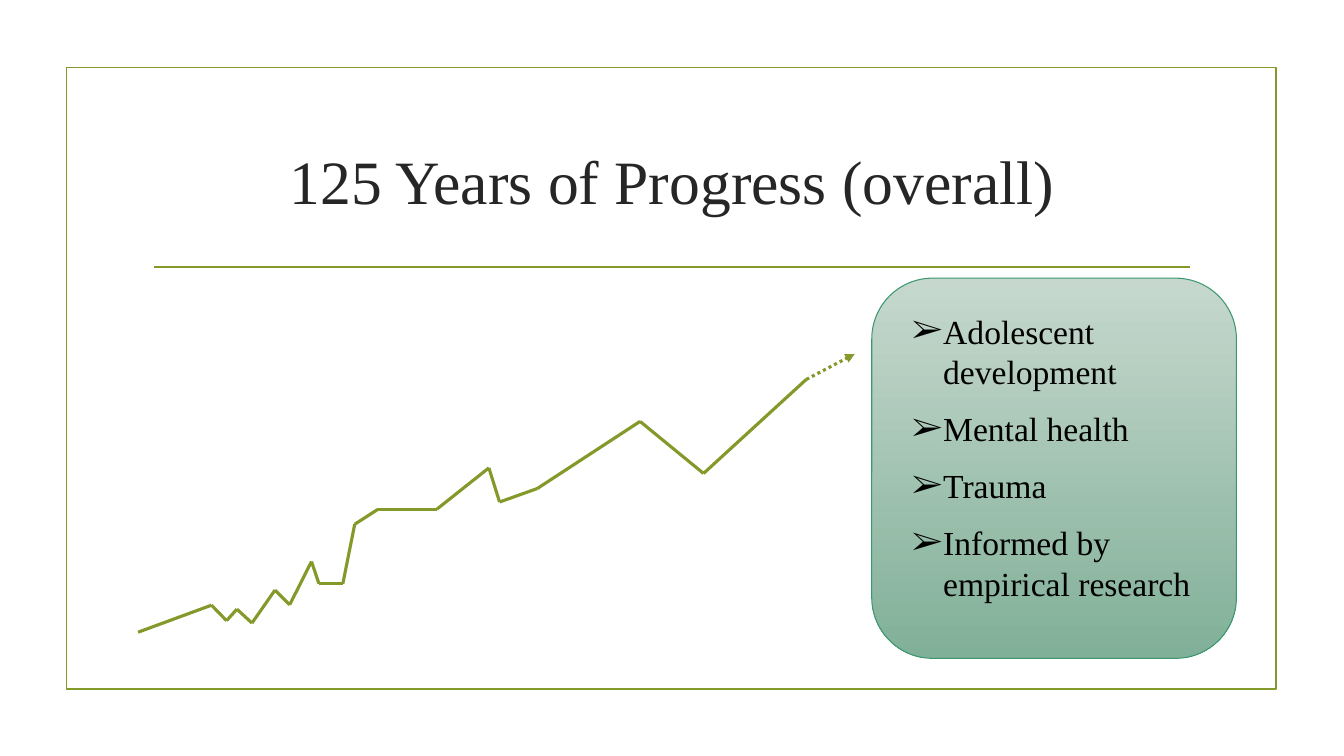
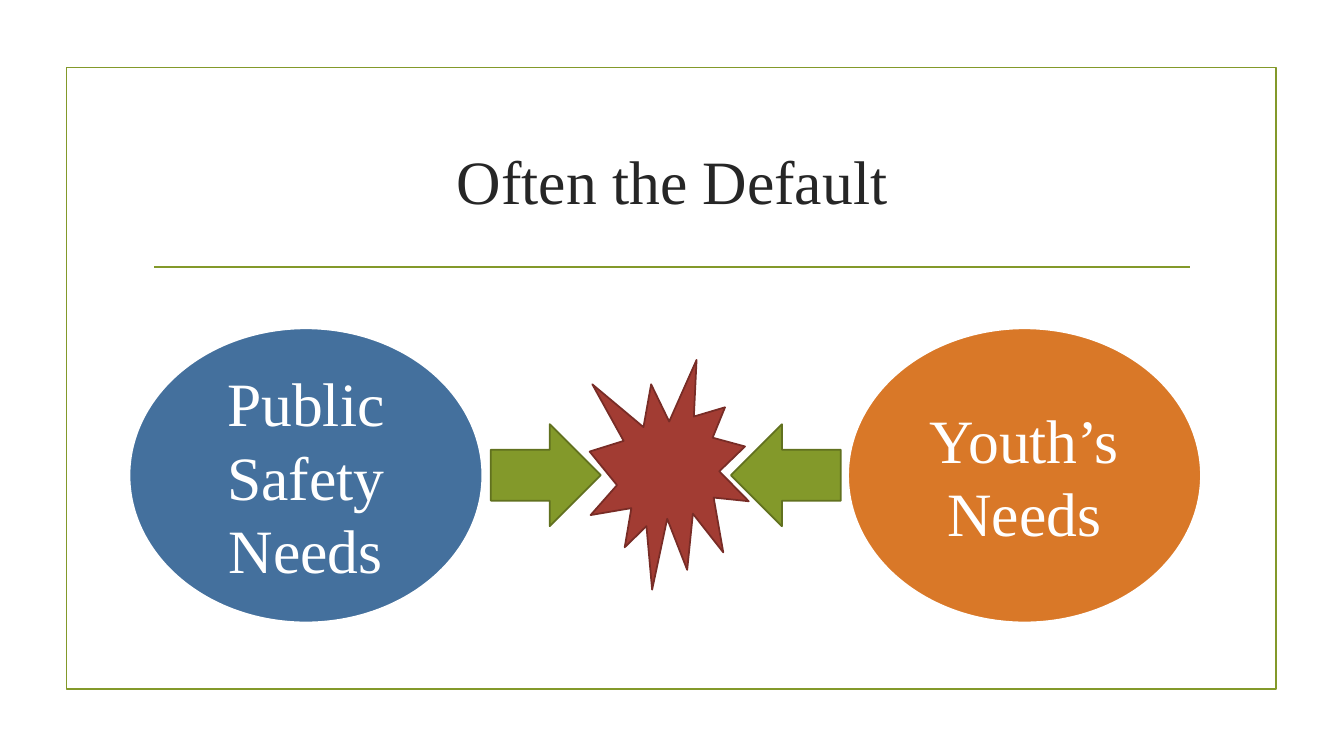
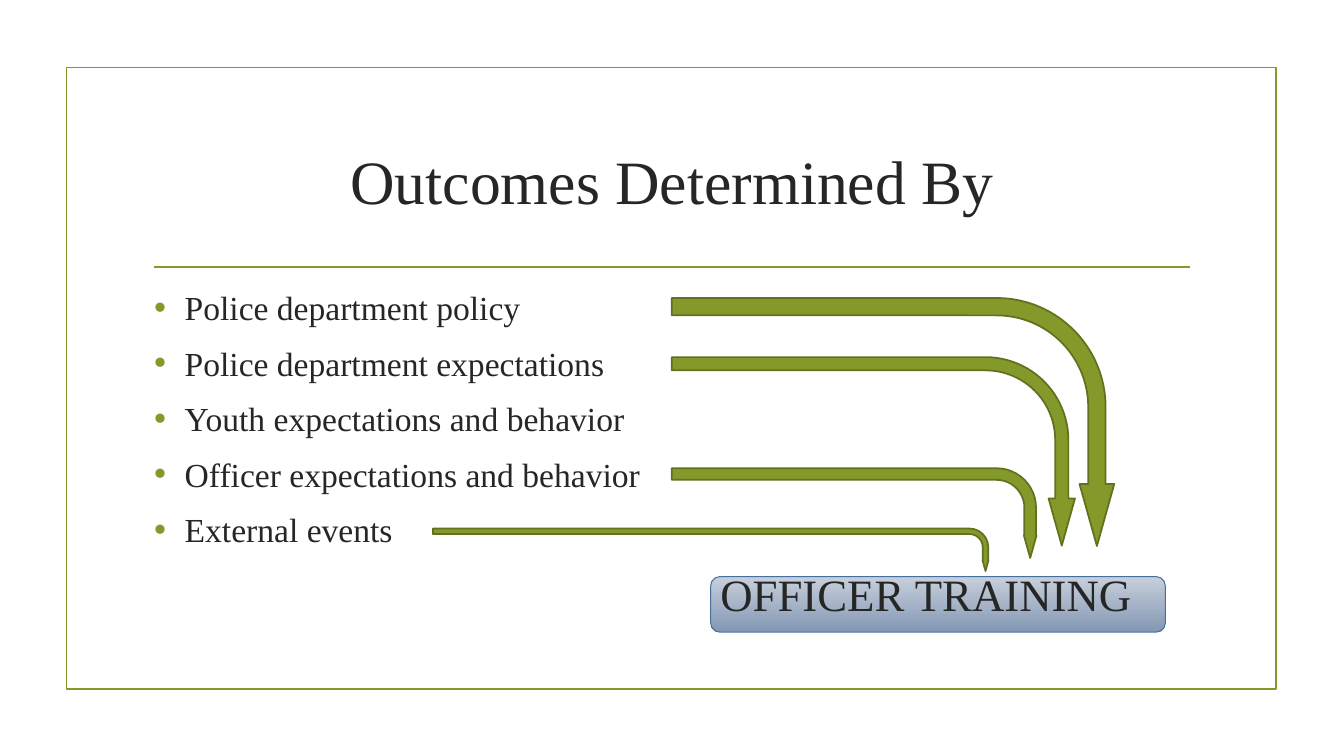
"""Build three slides on progress, clashing needs and outcomes in police work."""
from dataclasses import dataclass
from itertools import pairwise

from lxml import etree
from pptx import Presentation
from pptx.dml.color import RGBColor
from pptx.enum.dml import MSO_LINE
from pptx.enum.shapes import MSO_CONNECTOR, MSO_SHAPE
from pptx.enum.text import MSO_ANCHOR, MSO_AUTO_SIZE, PP_ALIGN
from pptx.oxml.ns import qn
from pptx.util import Cm, Pt

RECT, ROUND = MSO_SHAPE.RECTANGLE, MSO_SHAPE.ROUNDED_RECTANGLE
OVAL, BURST = MSO_SHAPE.OVAL, MSO_SHAPE.EXPLOSION1
ARROW, BENT = MSO_SHAPE.RIGHT_ARROW, MSO_SHAPE.BENT_ARROW
STRAIGHT, DOTS = MSO_CONNECTOR.STRAIGHT, MSO_LINE.ROUND_DOT
MIDDLE, TOP = MSO_ANCHOR.MIDDLE, MSO_ANCHOR.TOP
LEFT, CENTER, RIGHT = PP_ALIGN.LEFT, PP_ALIGN.CENTER, PP_ALIGN.RIGHT
FIXED = MSO_AUTO_SIZE.NONE


@dataclass(frozen=True)
class Theme:
    """Colours, font and type sizes."""
    font: str = "Times New Roman"
    ink: str = "262626"
    black: str = "000000"
    white: str = "FFFFFF"
    green: str = "83992A"
    moss: str = "61711F"
    blue: str = "44709D"
    orange: str = "D97828"
    red: str = "A23C33"
    wine: str = "782C26"
    teal: str = "3C9770"
    mint: tuple = ("C6D8CE", "81B098")
    steel: tuple = ("C7CFDB", "8498B4")
    big: int = 44
    mid: int = 32
    small: int = 24
    thin: float = 0.75
    edge: float = 1.25
    rim: float = 2
    trend: float = 2.25


T = Theme()
FRAME = (1.68, 1.7, 30.48, 15.67)
RULE = ((3.89, 6.73), (30, 6.73))
HEAD = (3.61, 2.72, 26.67, 3.63)
INDENT = 0.79

TITLES = ["125 Years of Progress (overall)", "Often the Default", "Outcomes Determined By"]

TREND = [
    (3.48, 15.93), (5.33, 15.25), (5.71, 15.64), (5.97, 15.35), (6.35, 15.7),
    (6.93, 14.87), (7.3, 15.24), (7.85, 14.15), (8.04, 14.71), (8.64, 14.71),
    (8.94, 13.21), (9.53, 12.83), (11.01, 12.83), (12.32, 11.79), (12.59, 12.65),
    (13.54, 12.31), (16.13, 10.62), (17.73, 11.93), (20.32, 9.56),
]
AHEAD = (21.54, 8.92)
CARD = (21.97, 7.01, 9.19, 9.58)
NOTES = (22.73, 7.7, 8.18, 7.7)
GAINS = ["Adolescent development", "Mental health", "Trauma", "Informed by empirical research"]

NEEDS = [
    (3.25, T.blue, ["Public Safety Needs"], 12.37, 0),
    (21.36, T.orange, ["Youth’s", "Needs"], 18.42, 180),
]
CLASH = (14.86, 9.07, 4.01, 5.79)

BODY = (3.61, 7.11, 25.45, 9.22)
GOAL = (17.91, 14.53, 11.46, 1.4)
CAUSES = [
    "Police department policy",
    "Police department expectations",
    "Youth expectations and behavior",
    "Officer expectations and behavior",
    "External events",
]
RESULT = "OFFICER TRAINING "
BENDS = [
    (16.93, 7.51, 11.15, 6.25, 0.07),
    (16.93, 9, 10.16, 4.75, 0.07),
    (16.93, 11.8, 9.19, 2.26, 0.13),
    (10.91, 13.32, 14, 1.07, 0.13),
]


def rgb(code):
    """Turn a hex code into a colour."""
    return RGBColor.from_string(code)


def apply(obj, **looks):
    """Set each named format value on an object."""
    for name, value in looks.items():
        setattr(obj, name, value)


def place(shape, box):
    """Move a shape to a box given in centimetres."""
    apply(shape, **dict(zip(("left", "top", "width", "height"), map(Cm, box))))


def node(parent, tag, **attrs):
    """Append a drawing element."""
    return etree.SubElement(parent, qn(f"a:{tag}"), **attrs)


def draw(slide, kind, box, fill, edge, width=T.edge, turn=0, adjust=()):
    """Add a preset shape with plain, gradient or no fill."""
    shape = slide.shapes.add_shape(kind, *map(Cm, box))
    shape.shadow.inherit = False
    if fill is None:
        shape.fill.background()
    elif isinstance(fill, tuple):
        shape.fill.gradient()
        shape.fill.gradient_angle = 270
        for stop, code in zip(shape.fill.gradient_stops, fill):
            stop.color.rgb = rgb(code)
    else:
        shape.fill.solid()
        shape.fill.fore_color.rgb = rgb(fill)
    shape.line.color.rgb = rgb(edge)
    shape.line.width = Pt(width)
    shape.rotation = turn
    for i, value in enumerate(adjust):
        shape.adjustments[i] = value
    return shape


def link(slide, start, end, width, dotted=False):
    """Add a straight line, dotted with an arrowhead if asked."""
    line = slide.shapes.add_connector(STRAIGHT, *map(Cm, (*start, *end)))
    line.line.color.rgb = rgb(T.green)
    line.line.width = Pt(width)
    part = line.element.spPr
    if dotted:
        line.line.dash_style = DOTS
        node(part.find(qn("a:ln")), "tailEnd", type="triangle")
    node(part, "effectLst")
    return line


def bullet(para, char, color, size=100):
    """Give a paragraph a hanging bullet, or none."""
    props = para._p.get_or_add_pPr()
    depth = Cm(INDENT) if char else 0
    props.set("marL", str(depth))
    props.set("indent", str(-depth))
    if not char:
        node(props, "buNone")
        return
    node(node(props, "buClr"), "srgbClr", val=color)
    node(props, "buSzPct", val=str(size * 1000))
    node(props, "buFont", typeface=T.font)
    node(props, "buChar", char=char)


def write(shape, lines, size, color, align=LEFT, anchor=TOP):
    """Fill a shape with one paragraph a line and return the paragraphs."""
    frame = shape.text_frame
    apply(frame, text="\n".join(lines), word_wrap=True,
          auto_size=FIXED, vertical_anchor=anchor)
    for para in frame.paragraphs:
        para.alignment = align
        font = para.runs[0].font
        apply(font, name=T.font, size=Pt(size))
        font.color.rgb = rgb(color)
    return frame.paragraphs


def start(deck, title, layout):
    """Add a slide with its title."""
    slide = deck.slides.add_slide(deck.slide_layouts[layout])
    write(slide.shapes.title, [title], T.big, T.ink, CENTER, MIDDLE)
    return slide


def dress(deck, slide):
    """Put the frame, the rule and the title place on the master."""
    master = deck.slide_master
    parts = [draw(slide, RECT, FRAME, None, T.green), link(slide, *RULE, T.edge)]
    for i, part in enumerate(parts):
        part.element.xpath(".//p:cNvPr")[0].set("id", str(20 + i))
        master.shapes.element.insert(2 + i, part.element)
    place(master.placeholders[0], HEAD)


def progress(slide):
    """Draw the trend line and the list of gains."""
    for a, b in pairwise(TREND):
        link(slide, a, b, T.trend)
    link(slide, TREND[-1], AHEAD, T.trend, dotted=True)
    draw(slide, ROUND, CARD, T.mint, T.teal, T.thin)
    notes = slide.shapes.add_textbox(*map(Cm, NOTES))
    for para in write(notes, GAINS, T.small, T.black):
        bullet(para, "➢", T.black)
        para.space_after = Pt(12)


def clash(slide):
    """Draw two needs pushing against each other."""
    for x, fill, words, tip, turn in NEEDS:
        oval = draw(slide, OVAL, (x, 8.26, 8.92, 7.44), fill, T.white, T.rim)
        write(oval, words, T.big, T.white, CENTER, MIDDLE)
        draw(slide, ARROW, (tip, 10.69, 2.77, 2.57), T.green, T.moss, turn=turn)
    draw(slide, BURST, CLASH, T.red, T.wine)


def outcome(slide):
    """List the causes and lead them to the result."""
    goal = draw(slide, ROUND, GOAL, T.steel, T.blue, T.thin)
    slide.shapes.element.insert(2, goal.element)
    body = slide.placeholders[1]
    place(body, BODY)
    paras = write(body, [*CAUSES, RESULT], T.small, T.ink)
    for para in paras:
        bullet(para, "" if para is paras[-1] else "•", T.green, 115)
        para.space_after = Pt(6)
    paras[0].space_before = Pt(0)
    paras[-1].alignment = RIGHT
    paras[-1].runs[0].font.size = Pt(T.mid)
    for x, y, w, h, stem in BENDS:
        box = (x + (w - h) / 2, y + (h - w) / 2, h, w)
        draw(slide, BENT, box, T.green, T.moss, turn=90,
             adjust=(stem, 0.07, 0.25, 0.44))


def main():
    """Build and save the deck."""
    deck = Presentation()
    apply(deck, slide_width=Cm(33.87), slide_height=Cm(19.05))
    slides = [start(deck, title, kind) for title, kind in zip(TITLES, (5, 5, 1))]
    dress(deck, slides[0])
    for fill, slide in zip((progress, clash, outcome), slides):
        fill(slide)
    deck.save("out.pptx")


if __name__ == "__main__":
    main()
